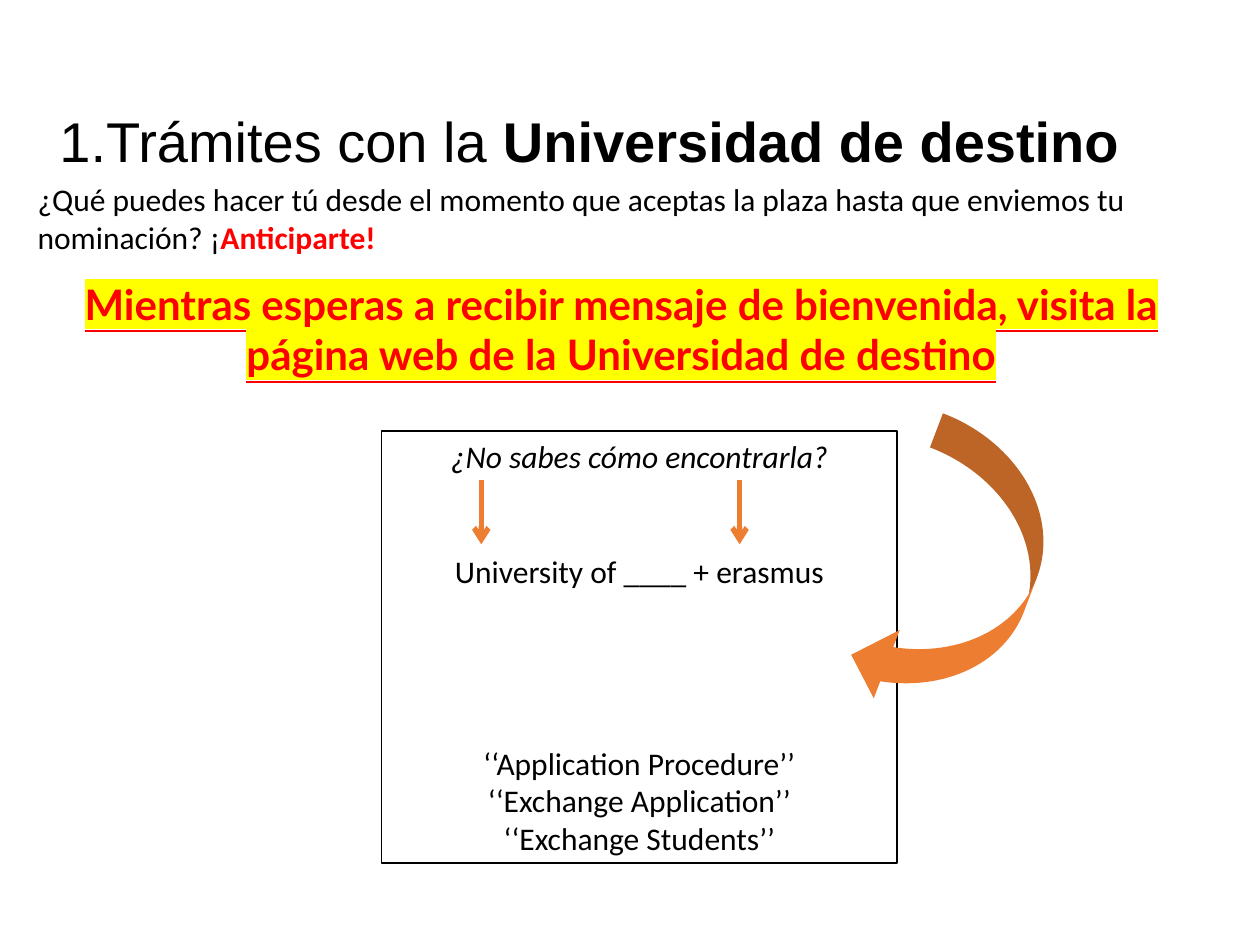
from lxml import etree
from pptx import Presentation
from pptx.dml.color import RGBColor
from pptx.enum.shapes import MSO_CONNECTOR, MSO_SHAPE
from pptx.enum.text import MSO_ANCHOR, MSO_AUTO_SIZE, PP_ALIGN
from pptx.oxml.ns import qn
from pptx.util import Inches, Pt

CENTER, LEFT = PP_ALIGN.CENTER, PP_ALIGN.LEFT
TOP, MIDDLE = MSO_ANCHOR.TOP, MSO_ANCHOR.MIDDLE
NO_AUTOFIT = MSO_AUTO_SIZE.NONE
STRAIGHT = MSO_CONNECTOR.STRAIGHT
RECTANGLE, CURVED_ARROW = MSO_SHAPE.RECTANGLE, MSO_SHAPE.CURVED_DOWN_ARROW
TITLE_ONLY = 5

THEME = {
    "title_font": "Arial", "body_font": "Calibri", "banner_font": "Lato",
    "title_size": 32, "banner_size": 24, "body_size": 18, "line_height": 22,
    "text": "000000", "alert": "FF0000", "highlight": "FFFF00", "arrow": "ED7D31",
}

# Content: runs are (text, emphasised)
TITLE = [("1.Trámites con la ", False), ("Universidad de destino", True)]
QUESTION = [
    ("¿Qué puedes hacer tú desde el momento que aceptas la plaza "
     "hasta que enviemos tu nominación? ¡", False),
    ("Anticiparte!", True),
]
BANNER = ("Mientras esperas a recibir mensaje de bienvenida, visita la "
          "página web de la Universidad de destino")
# Search tips: text, italic, lines left free above
SEARCH_TIPS = [
    ("¿No sabes cómo encontrarla?", True, 0),
    ("University of ____ + erasmus", False, 2),
    ("‘‘Application Procedure’’", False, 4),
    ("‘‘Exchange Application’’", False, 0),
    ("‘‘Exchange Students’’", False, 0),
]

# Places: left, top, width, height in inches
TITLE_AT = (0.2, 0.52, 8.96, 1.18)
QUESTION_AT = (0.2, 1.38, 9.06, 0.71)
BANNER_AT = (0.43, 2.16, 9, 0.91)
TIPS_AT = (3.03, 3.42, 4.09, 3.43)
CURVED_ARROW_AT = (6.44, 4, 2.34, 1.16)
CURVED_ARROW_ROTATION = 110.8
DOWN_ARROWS_X = (3.82, 5.87)
DOWN_ARROWS_Y = (3.81, 4.32)


def color(name):
    return RGBColor.from_string(THEME[name])


def inches(lengths):
    return [Inches(length) for length in lengths]


def set_frame(frame, anchor=TOP):
    frame.word_wrap = True
    frame.auto_size = NO_AUTOFIT
    frame.vertical_anchor = anchor
    return frame


def style_paragraph(paragraph, role, align, ink="text"):
    paragraph.alignment = align
    paragraph.font.name = THEME[role + "_font"]
    paragraph.font.size = Pt(THEME[role + "_size"])
    paragraph.font.color.rgb = color(ink)


def add_runs(paragraph, runs, emphasis="text"):
    for text, emphasised in runs:
        run = paragraph.add_run()
        run.text = text
        if emphasised:
            run.font.bold = True
            run.font.color.rgb = color(emphasis)


def highlight(run, name):
    marker = etree.SubElement(run.font._element, qn("a:highlight"))
    etree.SubElement(marker, qn("a:srgbClr"), val=THEME[name])


def add_down_arrow(slide, x):
    top, bottom = DOWN_ARROWS_Y
    arrow = slide.shapes.add_connector(STRAIGHT, *inches((x, top, x, bottom)))
    arrow.line.color.rgb = color("arrow")
    arrow.line.width = Pt(3)
    etree.SubElement(arrow.line._get_or_add_ln(), qn("a:tailEnd"), type="arrow")
    etree.SubElement(arrow._element.spPr, qn("a:effectLst"))


def main():
    prs = Presentation()
    prs.slide_width, prs.slide_height = Inches(10), Inches(7.5)
    slide = prs.slides.add_slide(prs.slide_layouts[TITLE_ONLY])

    # Title
    title = slide.shapes.title
    title.left, title.top, title.width, title.height = inches(TITLE_AT)
    heading = set_frame(title.text_frame, MIDDLE).paragraphs[0]
    style_paragraph(heading, "title", CENTER)
    add_runs(heading, TITLE)

    # Opening question
    question_box = slide.shapes.add_textbox(*inches(QUESTION_AT))
    question = set_frame(question_box.text_frame).paragraphs[0]
    style_paragraph(question, "body", LEFT)
    add_runs(question, QUESTION, "alert")

    # Highlighted banner
    banner_box = slide.shapes.add_textbox(*inches(BANNER_AT))
    banner = set_frame(banner_box.text_frame).paragraphs[0]
    style_paragraph(banner, "banner", CENTER, "alert")
    banner.font.bold = banner.font.underline = True
    add_runs(banner, [(BANNER, False)])
    highlight(banner.runs[0], "highlight")

    # Search tips
    tips_box = slide.shapes.add_shape(RECTANGLE, *inches(TIPS_AT))
    tips_box.shadow.inherit = False
    tips_box.fill.background()
    tips_box.line.color.rgb = color("text")
    tips_box.line.width = Pt(0.75)
    tips = set_frame(tips_box.text_frame)
    for index, (text, italic, free_lines) in enumerate(SEARCH_TIPS):
        tip = tips.add_paragraph() if index else tips.paragraphs[0]
        style_paragraph(tip, "body", CENTER)
        tip.font.italic = italic
        tip.space_before = Pt(free_lines * THEME["line_height"])
        add_runs(tip, [(text, False)])

    # Arrows
    for x in DOWN_ARROWS_X:
        add_down_arrow(slide, x)
    curved_arrow = slide.shapes.add_shape(CURVED_ARROW, *inches(CURVED_ARROW_AT))
    curved_arrow.rotation = CURVED_ARROW_ROTATION
    curved_arrow.shadow.inherit = False
    curved_arrow.fill.solid()
    curved_arrow.fill.fore_color.rgb = color("arrow")
    curved_arrow.line.fill.background()

    prs.save("out.pptx")


if __name__ == "__main__":
    main()
